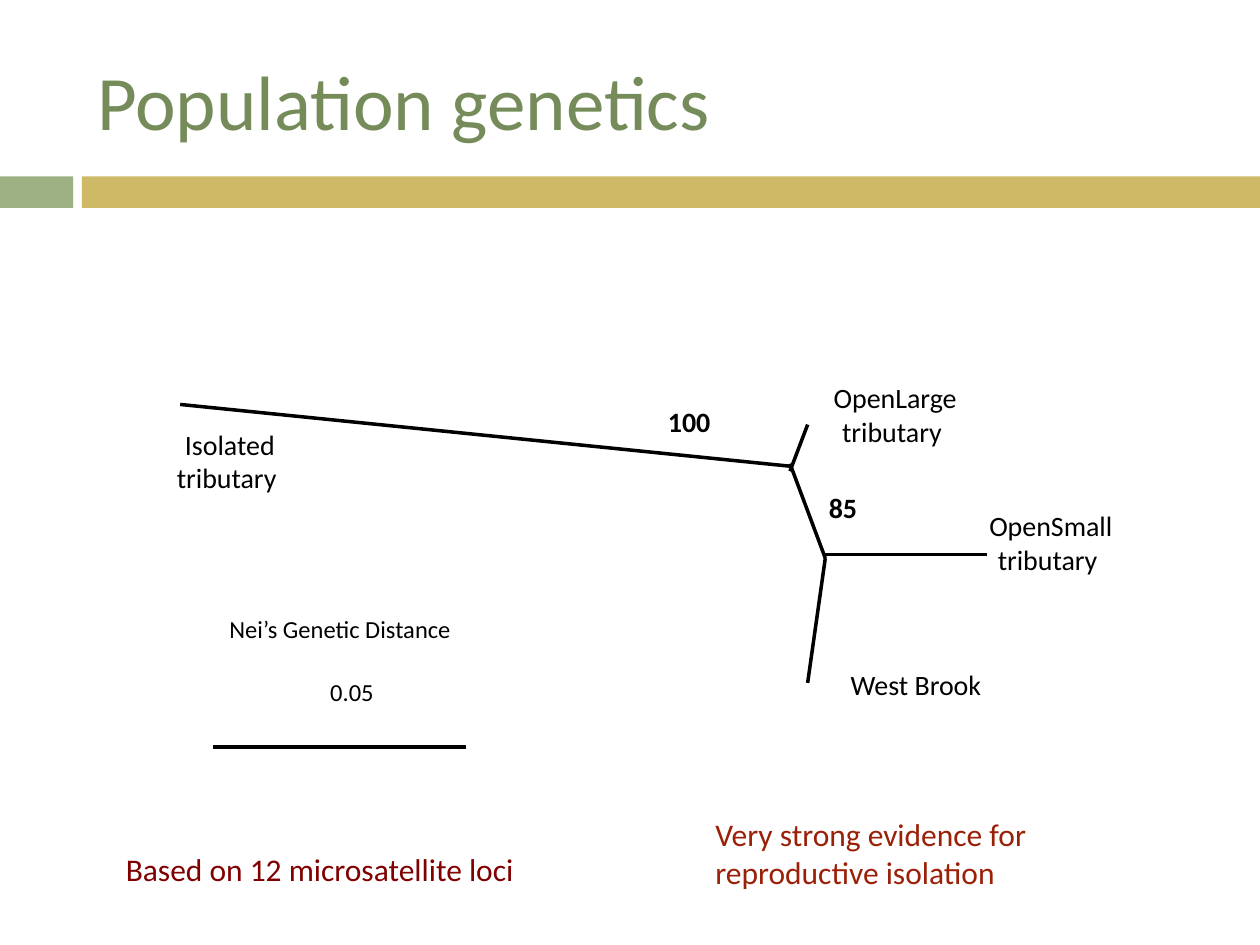
from dataclasses import dataclass

from lxml import etree
from pptx import Presentation
from pptx.dml.color import RGBColor
from pptx.enum import shapes, text
from pptx.oxml import ns
from pptx.util import Inches, Pt


@dataclass(frozen=True)
class Theme:
    font: str = "Calibri"
    title: str = "758C5A"
    ink: str = "000000"
    sage: str = "9CB084"
    gold: str = "CEB966"
    maroon: str = "800000"
    rust: str = "9A2008"
    title_size: int = 44
    note_size: int = 18
    label_size: int = 16
    scale_size: int = 14
    line_width: int = 2


THEME = Theme()
LEFT, CENTER = text.PP_ALIGN.LEFT, text.PP_ALIGN.CENTER

FORK_UPPER, FORK_LOWER = (6.27, 3.7), (6.55, 4.43)
BRANCHES = [
    ((1.43, 3.21), FORK_UPPER),
    ((6.41, 3.37), (6.27, 3.74)),
    ((6.27, 3.68), FORK_LOWER),
    (FORK_LOWER, (6.41, 5.42)),
    ((7.83, 4.4), (6.55, 4.4)),
]
SCALE_BAR = ((3.7, 5.93), (1.69, 5.93))

POPULATIONS = [
    ("Isolated tributary ", (1.11, 3.37, 1.43, 0.64)),
    ("OpenLarge tributary ", (6.39, 3, 1.43, 0.64)),
    ("OpenSmall tributary ", (7.77, 4.02, 1.14, 0.64)),
    ("West Brook", (6.47, 5.28, 1.6, 0.42)),
]
BOOTSTRAPS = [
    ("100", (5.15, 3.19, 0.64, 0.35)),
    ("85", (6.37, 3.87, 0.64, 0.42)),
]


def style_text(tf, words, size, color, align, bold=False):
    tf.text = words
    p = tf.paragraphs[0]
    p.alignment = align
    font = p.runs[0].font
    font.name, font.size, font.bold = THEME.font, Pt(size), bold
    font.color.rgb = RGBColor.from_string(color)


def add_title(s, words):
    sp = s.shapes.title
    sp.left, sp.top, sp.width, sp.height = map(Inches, (0.67, 0.25, 8.92, 1.08))
    sp.text_frame.vertical_anchor = text.MSO_ANCHOR.MIDDLE
    style_text(sp.text_frame, words, THEME.title_size, THEME.title, LEFT)


def add_band(s, left, width, color):
    sp = s.shapes.add_shape(shapes.MSO_SHAPE.RECTANGLE,
                            *map(Inches, (left, 1.4, width, 0.25)))
    sp.shadow.inherit = False
    sp.fill.solid()
    sp.fill.fore_color.rgb = RGBColor.from_string(color)
    sp.line.fill.background()


def add_text(s, words, box, size, color=THEME.ink, align=LEFT, wrap=True):
    tf = s.shapes.add_textbox(*map(Inches, box)).text_frame
    tf.word_wrap = wrap
    style_text(tf, words, size, color, align)
    return tf


def add_label(s, words, box, size=THEME.label_size, align=CENTER, bold=False):
    """Add a diagram label with narrow margins."""
    tf = add_text(s, words, box, size, align=align)
    tf.margin_left = tf.margin_right = Inches(0.04)
    tf.margin_top = tf.margin_bottom = Inches(0.02)
    tf.paragraphs[0].runs[0].font.bold = bold


def add_line(s, start, end):
    line = s.shapes.add_connector(shapes.MSO_CONNECTOR.STRAIGHT,
                                  *map(Inches, start + end))
    line.line.color.rgb = RGBColor.from_string(THEME.ink)
    line.line.width = Pt(THEME.line_width)
    etree.SubElement(line._element.spPr, ns.qn("a:effectLst"))


def main():
    prs = Presentation()
    prs.slide_width, prs.slide_height = Inches(10), Inches(7.5)
    s = prs.slides.add_slide(prs.slide_layouts[5])

    add_band(s, 0, 0.58, THEME.sage)
    add_band(s, 0.65, 9.35, THEME.gold)
    add_title(s, "Population genetics")

    for start, end in BRANCHES + [SCALE_BAR]:
        add_line(s, start, end)
    for words, box in POPULATIONS:
        add_label(s, words, box)
    for words, box in BOOTSTRAPS:
        add_label(s, words, box, bold=True)
    add_label(s, "Nei’s Genetic Distance", (1.78, 4.85, 2.79, 0.55),
              THEME.scale_size, LEFT)
    add_label(s, "0.05 ", (2.39, 5.35, 0.85, 0.32), THEME.scale_size)

    add_text(s, "Based on 12 microsatellite loci", (0.9, 6.7, 3.54, 0.4),
             THEME.note_size, THEME.maroon, wrap=False)
    add_text(s, "Very strong evidence for reproductive isolation",
             (5.58, 6.42, 3.83, 0.71), THEME.note_size, THEME.rust)

    prs.save("out.pptx")


if __name__ == "__main__":
    main()
